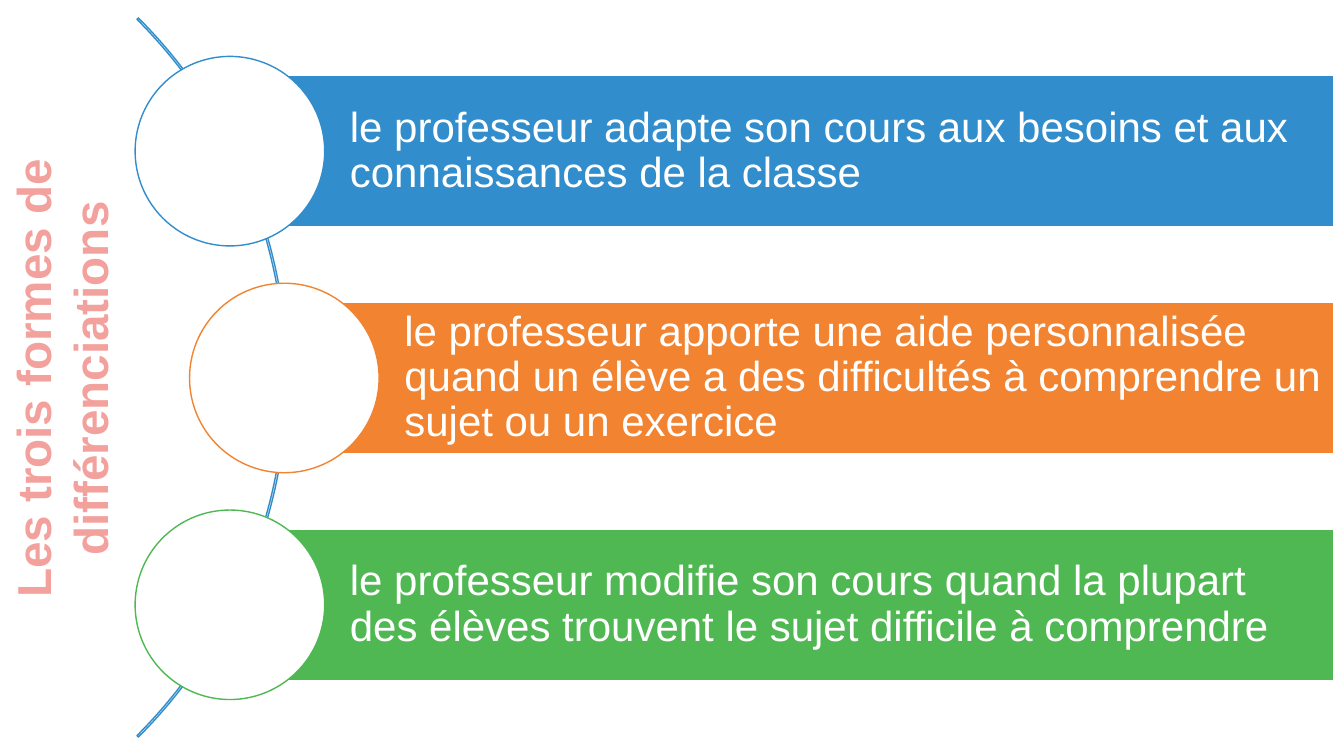
from pptx import Presentation
from pptx.dml.color import RGBColor
from pptx.enum.shapes import MSO_SHAPE
from pptx.enum.text import MSO_ANCHOR, PP_ALIGN
from pptx.util import Inches, Pt

WHITE = RGBColor(0xFF, 0xFF, 0xFF)
PINK = RGBColor(0xF3, 0xA1, 0x9D)
BLUE = RGBColor(0x31, 0x8D, 0xCB)
ORANGE = RGBColor(0xF2, 0x83, 0x30)
GREEN = RGBColor(0x50, 0xB8, 0x52)

TITLE = "Les trois formes de différenciations"
# Text, colour, horizontal centre of the circle
FORMS = [
    ("le professeur adapte son cours aux besoins et aux connaissances de la classe", BLUE, 2.28),
    ("le professeur apporte une aide personnalisée quand un élève a des difficultés "
     "à comprendre un sujet ou un exercice", ORANGE, 2.82),
    ("le professeur modifie son cours quand la plupart des élèves trouvent le sujet "
     "difficile à comprendre", GREEN, 2.28),
]

FIRST_CENTRE, ROW_STEP = 1.5, 2.25
BAR_RIGHT, BAR_HEIGHT = 13.23, 1.5
CIRCLE_SIZE = 1.88
ARC_LEFT, ARC_TOP, ARC_SIZE = -7.24, -1.3, 10.09


def add_outlined_shape(slide, preset, left, top, width, height, fill, line):
    shape = slide.shapes.add_shape(
        preset, Inches(left), Inches(top), Inches(width), Inches(height))
    shape.shadow.inherit = False
    if fill is None:
        shape.fill.background()
    else:
        shape.fill.solid()
        shape.fill.fore_color.rgb = fill
    shape.line.color.rgb = line
    shape.line.width = Pt(1)
    return shape


def write_text(shape, text, size, colour, alignment, bold=False):
    frame = shape.text_frame
    frame.word_wrap = True
    frame.text = text
    paragraph = frame.paragraphs[0]
    paragraph.alignment = alignment
    font = paragraph.runs[0].font
    font.name = "Arial"
    font.size = Pt(size)
    font.bold = bold
    font.color.rgb = colour
    return frame


def add_title(slide):
    title = slide.shapes.add_textbox(Inches(-3.14), Inches(3.13), Inches(7.5), Inches(1.25))
    title.rotation = 270
    write_text(title, TITLE, 34, PINK, PP_ALIGN.CENTER, bold=True)


def add_arc(slide):
    arc = add_outlined_shape(
        slide, MSO_SHAPE.BLOCK_ARC, ARC_LEFT, ARC_TOP, ARC_SIZE, ARC_SIZE, None, BLUE)
    for index, value in enumerate((189, 27, 0.002)):
        arc.adjustments[index] = value


def add_form(slide, row, text, colour, centre_x):
    centre_y = FIRST_CENTRE + row * ROW_STEP
    bar = add_outlined_shape(
        slide, MSO_SHAPE.RECTANGLE, centre_x, centre_y - BAR_HEIGHT / 2,
        BAR_RIGHT - centre_x, BAR_HEIGHT, colour, WHITE)
    frame = write_text(bar, text, 30, WHITE, PP_ALIGN.LEFT)
    frame.paragraphs[0].line_spacing = 0.9
    frame.vertical_anchor = MSO_ANCHOR.MIDDLE
    frame.margin_left = Inches(1.19)
    frame.margin_top = frame.margin_right = frame.margin_bottom = Inches(0.08)
    add_outlined_shape(
        slide, MSO_SHAPE.OVAL, centre_x - CIRCLE_SIZE / 2, centre_y - CIRCLE_SIZE / 2,
        CIRCLE_SIZE, CIRCLE_SIZE, WHITE, colour)


def main():
    presentation = Presentation()
    presentation.slide_width = Inches(13.33)
    presentation.slide_height = Inches(7.5)
    slide = presentation.slides.add_slide(presentation.slide_layouts[6])
    add_title(slide)
    add_arc(slide)
    for row, (text, colour, centre_x) in enumerate(FORMS):
        add_form(slide, row, text, colour, centre_x)
    presentation.save("out.pptx")


if __name__ == "__main__":
    main()
